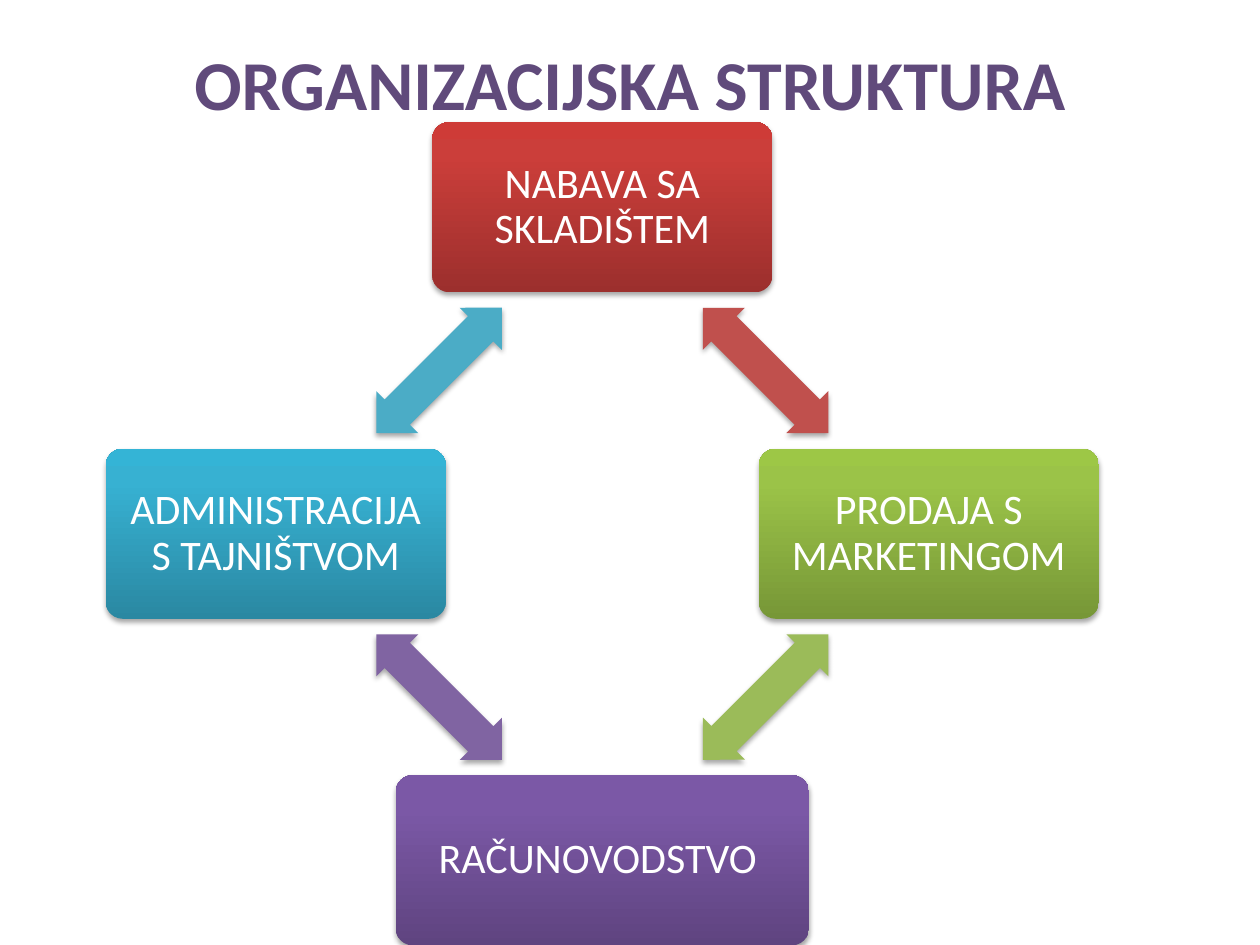
import copy
import math
from dataclasses import dataclass

import lxml.etree
import pptx
import pptx.dml.color
import pptx.enum.shapes
import pptx.enum.text
import pptx.oxml.ns
import pptx.util

Pt = pptx.util.Pt
SHAPE = pptx.enum.shapes.MSO_SHAPE


@dataclass(frozen=True)
class Theme:
    font: str = "Calibri"
    title_size: float = 40
    node_size: float = 24
    title: str = "604A7B"
    node_text: str = "FFFFFF"
    shadow: str = "000000"


@dataclass(frozen=True)
class Department:
    name: str
    gradient: tuple[str, str, str]
    arrow: str
    width: float = 194.4


THEME = Theme()
CENTER_X, CENTER_Y, RADIUS = 344.2, 305, 186.6
NODE_HEIGHT = 97.2
ARROW_WIDTH, ARROW_HEIGHT = 101.4, 34
STOPS = (0, 0.8, 1)

DEPARTMENTS = (
    Department("NABAVA SA SKLADIŠTEM", ("9C2F2D", "CB3E3A", "CE3B37"), "C0504D"),
    Department("PRODAJA S MARKETINGOM", ("779737", "9BC348", "9DC746"), "9BBB59"),
    Department("RAČUNOVODSTVO ", ("5F4480", "7B58A6", "7C57A8"), "8064A2", 236.2),
    Department("ADMINISTRACIJA S TAJNIŠTVOM", ("2A88A2", "37B1D2", "34B4D6"), "4BACC6"),
)


def rgb(color: str) -> pptx.dml.color.RGBColor:
    return pptx.dml.color.RGBColor.from_string(color)


def ring_point(angle: float, radius: float) -> tuple[float, float]:
    a = math.radians(angle)
    return CENTER_X + radius * math.sin(a), CENTER_Y - radius * math.cos(a)


def add_shadow(sp) -> None:
    sp.shadow.inherit = False
    qn = pptx.oxml.ns.qn
    effects = sp._element.spPr.find(qn("a:effectLst"))
    shadow = lxml.etree.SubElement(
        effects, qn("a:outerShdw"), blurRad=str(Pt(3.1)), dist=str(Pt(1.8)),
        dir="5400000", rotWithShape="0")
    color = lxml.etree.SubElement(shadow, qn("a:srgbClr"), val=THEME.shadow)
    lxml.etree.SubElement(color, qn("a:alpha"), val="35000")


def add_centered(slide, kind, center: tuple[float, float], width: float, height: float):
    x, y = center
    sp = slide.shapes.add_shape(
        kind, Pt(x - width / 2), Pt(y - height / 2), Pt(width), Pt(height))
    sp.line.fill.background()
    add_shadow(sp)
    return sp


def fill_gradient(sp, colors: tuple[str, str, str]) -> None:
    sp.fill.gradient()
    sp.fill.gradient_angle = 90
    stop_list = sp._element.spPr.find(".//" + pptx.oxml.ns.qn("a:gsLst"))
    stop_list.append(copy.deepcopy(stop_list[-1]))
    for stop, position, color in zip(sp.fill.gradient_stops, STOPS, colors):
        stop.position = position
        stop.color.rgb = rgb(color)


def write(tf, text: str, size: float, color: str, bold: bool = False):
    tf.word_wrap = True
    tf.vertical_anchor = pptx.enum.text.MSO_ANCHOR.MIDDLE
    p = tf.paragraphs[0]
    p.alignment = pptx.enum.text.PP_ALIGN.CENTER
    r = p.add_run()
    r.text = text
    r.font.name = THEME.font
    r.font.size = Pt(size)
    r.font.bold = bold
    r.font.color.rgb = rgb(color)
    return p


def add_node(slide, department: Department, angle: float) -> None:
    sp = add_centered(slide, SHAPE.ROUNDED_RECTANGLE, ring_point(angle, RADIUS),
                      department.width, NODE_HEIGHT)
    sp.adjustments[0] = 0.1
    fill_gradient(sp, department.gradient)
    tf = sp.text_frame
    tf.margin_left = tf.margin_right = tf.margin_top = tf.margin_bottom = Pt(10)
    p = write(tf, department.name, THEME.node_size, THEME.node_text)
    p.line_spacing = 0.9


def add_arrow(slide, color: str, angle: float) -> None:
    sp = add_centered(slide, SHAPE.LEFT_RIGHT_ARROW,
                      ring_point(angle, RADIUS / math.sqrt(2)), ARROW_WIDTH, ARROW_HEIGHT)
    sp.adjustments[0] = 0.6
    sp.adjustments[1] = 0.5
    sp.rotation = angle
    sp.fill.solid()
    sp.fill.fore_color.rgb = rgb(color)


def main() -> None:
    prs = pptx.Presentation()
    prs.slide_width, prs.slide_height = Pt(720), Pt(540)
    slide = prs.slides.add_slide(prs.slide_layouts[6])
    title = slide.shapes.add_textbox(Pt(36), Pt(0), Pt(648), Pt(94.3))
    write(title.text_frame, "ORGANIZACIJSKA STRUKTURA",
          THEME.title_size, THEME.title, bold=True)
    step = 360 / len(DEPARTMENTS)
    for i, department in enumerate(DEPARTMENTS):
        add_node(slide, department, i * step)
        add_arrow(slide, department.arrow, (i + 0.5) * step)
    prs.save("out.pptx")


if __name__ == "__main__":
    main()
